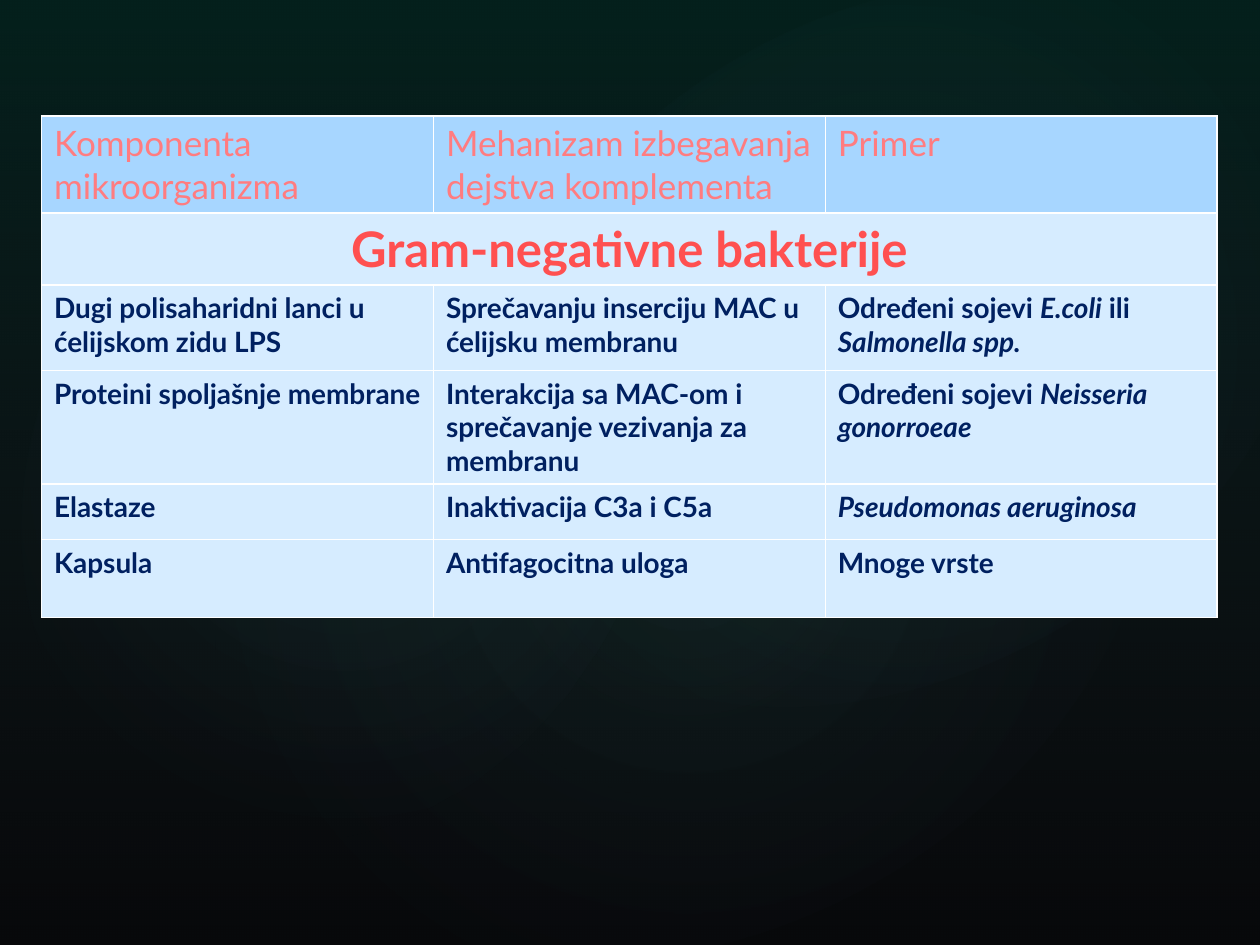
"""Build a slide with a table of bacterial complement evasion mechanisms."""
from lxml import etree
from pptx import Presentation
from pptx.dml.color import RGBColor
from pptx.enum.shapes import MSO_SHAPE
from pptx.enum.text import PP_ALIGN
from pptx.oxml import parse_xml
from pptx.oxml.ns import nsdecls, qn
from pptx.util import Inches, Pt

RECTANGLE, OVAL = MSO_SHAPE.RECTANGLE, MSO_SHAPE.OVAL
LEFT, CENTER = PP_ALIGN.LEFT, PP_ALIGN.CENTER
FONT = "Lato"
COLORS = {
    "background": "000000", "teal": "0D5A4F", "slate": "4E5B6F", "glow": "5FE8D6",
    "header_fill": "A7D6FF", "body_fill": "D6ECFF", "border": "FFFFFF",
    "header": "FF7C80", "group": "FF5050", "body": "002060",
}
LINEAR = '<a:lin ang="5400000" scaled="0"/>'
RADIAL = ('<a:path path="circle"><a:fillToRect l="50000" t="50000" '
          'r="50000" b="50000"/></a:path>')
GLOWS = [
    ((1.5, 1.14, 7.92, 6.24), 328.7, 7),
    ((-0.3, 1.28, 6.06, 4.9), 294.3, 8),
    ((3.58, 0.13, 7.09, 5.2), 328.7, 8),
]
HEADERS = ["Komponenta mikroorganizma", "Mehanizam izbegavanja dejstva komplementa",
           "Primer"]
GROUP = "Gram-negativne bakterije"
MECHANISMS = [
    ("Dugi polisaharidni lanci u ćelijskom zidu LPS",
     "Sprečavanju inserciju MAC u ćelijsku membranu",
     [("Određeni sojevi ", False), ("E.coli", True), (" ili ", False),
      ("Salmonella spp.", True)]),
    ("Proteini spoljašnje membrane",
     "Interakcija sa MAC-om i sprečavanje vezivanja za membranu",
     [("Određeni sojevi ", False), ("Neisseria gonorroeae", True)]),
    ("Elastaze", "Inaktivacija C3a i C5a", [("Pseudomonas aeruginosa", True)]),
    ("Kapsula", "Antifagocitna uloga", "Mnoge vrste"),
]
ROW_HEIGHTS = [0.77, 0.57, 0.68, 0.9, 0.44, 0.62]
COLUMN_WIDTH = 3.11


def rgb(name):
    return RGBColor.from_string(COLORS[name])


def add_gradient(slide, preset, box, stops, direction, rotation=0):
    """Add a borderless shape whose stops are (position %, color, opacity %)."""
    backdrop = slide.shapes.add_shape(preset, *map(Inches, box))
    backdrop.rotation = rotation
    backdrop.shadow.inherit = False
    backdrop.line.fill.background()
    backdrop.fill.background()
    stop_xml = "".join(
        f'<a:gs pos="{position * 1000}"><a:srgbClr val="{COLORS[color]}">'
        f'<a:alpha val="{opacity * 1000}"/></a:srgbClr></a:gs>'
        for position, color, opacity in stops)
    gradient = parse_xml(f'<a:gradFill {nsdecls("a")} rotWithShape="1">'
                         f'<a:gsLst>{stop_xml}</a:gsLst>{direction}</a:gradFill>')
    properties = backdrop.element.spPr
    properties.replace(properties.find(qn("a:noFill")), gradient)


def add_borders(cell):
    """Draw thin borders on all four sides, ahead of the cell fill."""
    properties = cell._tc.get_or_add_tcPr()
    for index, side in enumerate(("lnL", "lnR", "lnT", "lnB")):
        border = etree.Element(qn(f"a:{side}"), w=str(Pt(1)))
        fill = etree.SubElement(border, qn("a:solidFill"))
        etree.SubElement(fill, qn("a:srgbClr"), val=COLORS["border"])
        properties.insert(index, border)


def write_cell(cell, content, size, color, bold=True, fill="body_fill", align=LEFT):
    """Fill a cell with plain text or with (text, italic) runs."""
    cell.fill.solid()
    cell.fill.fore_color.rgb = rgb(fill)
    add_borders(cell)
    paragraph = cell.text_frame.paragraphs[0]
    paragraph.alignment = align
    runs = [(content, False)] if isinstance(content, str) else content
    for text, italic in runs:
        run = paragraph.add_run()
        run.text = text
        run.font.name = FONT
        run.font.size = Pt(size)
        run.font.bold = bold
        run.font.italic = italic
        run.font.color.rgb = rgb(color)


def add_mechanism_table(slide):
    """Add the header, the merged group row and the mechanism rows."""
    table = slide.shapes.add_table(
        len(ROW_HEIGHTS), len(HEADERS), Inches(0.33), Inches(0.92),
        Inches(COLUMN_WIDTH * len(HEADERS)), Inches(sum(ROW_HEIGHTS))).table
    for column in table.columns:
        column.width = Inches(COLUMN_WIDTH)
    for row, height in zip(table.rows, ROW_HEIGHTS):
        row.height = Inches(height)
    for cell, header in zip(table.rows[0].cells, HEADERS):
        write_cell(cell, header, 20, "header", bold=False, fill="header_fill")
    table.cell(1, 0).merge(table.cell(1, len(HEADERS) - 1))
    write_cell(table.cell(1, 0), GROUP, 28, "group", align=CENTER)
    for row_index, mechanism in enumerate(MECHANISMS, start=2):
        for cell, content in zip(table.rows[row_index].cells, mechanism):
            write_cell(cell, content, 16, "body")


def main():
    presentation = Presentation()
    presentation.slide_width, presentation.slide_height = Inches(10), Inches(7.5)
    slide = presentation.slides.add_slide(presentation.slide_layouts[6])
    slide.background.fill.solid()
    slide.background.fill.fore_color.rgb = rgb("background")
    add_gradient(slide, RECTANGLE, (0, 0, 10, 7.5),
                 [(0, "teal", 36), (100, "slate", 10)], LINEAR)
    for box, rotation, opacity in GLOWS:
        add_gradient(slide, OVAL, box, [(0, "glow", opacity), (58, "slate", 0)],
                     RADIAL, rotation)
    add_mechanism_table(slide)
    presentation.save("out.pptx")


if __name__ == "__main__":
    main()
